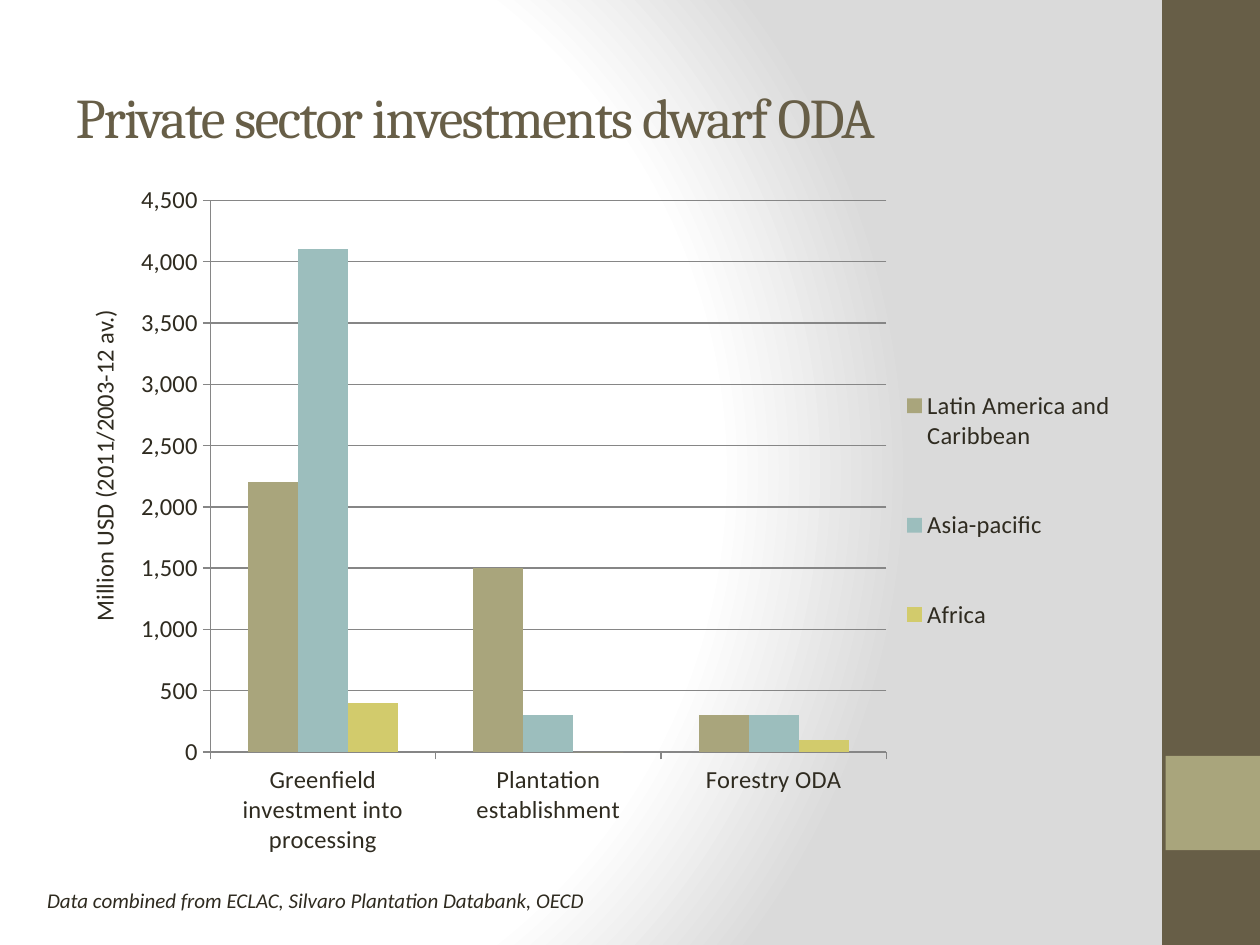
from lxml import etree
from pptx import Presentation
from pptx.chart.data import CategoryChartData
from pptx.dml.color import RGBColor
from pptx.enum.chart import XL_CHART_TYPE, XL_LEGEND_POSITION, XL_TICK_MARK
from pptx.enum.shapes import MSO_SHAPE
from pptx.enum.text import MSO_ANCHOR, MSO_AUTO_SIZE, PP_ALIGN
from pptx.oxml import parse_xml
from pptx.oxml.ns import nsdecls, qn
from pptx.util import Cm, Pt

COLUMNS = XL_CHART_TYPE.COLUMN_CLUSTERED
LEGEND_RIGHT = XL_LEGEND_POSITION.RIGHT
TICK_OUT, TICK_NONE = XL_TICK_MARK.OUTSIDE, XL_TICK_MARK.NONE
RECTANGLE = MSO_SHAPE.RECTANGLE
MIDDLE, LEFT = MSO_ANCHOR.MIDDLE, PP_ALIGN.LEFT
FIT_TEXT = MSO_AUTO_SIZE.SHAPE_TO_FIT_TEXT

BROWN, OLIVE, INK, GREY = "675E47", "A9A57C", "2F2B20", "868686"

TITLE = "Private sector investments dwarf ODA"
AXIS_LABEL = "Million USD (2011/2003-12 av.)"
SOURCE = "Data combined from ECLAC, Silvaro Plantation Databank, OECD"
CATEGORIES = ["Greenfield investment into processing",
              "Plantation establishment", "Forestry ODA"]
REGIONS = [
    ("Latin America and Caribbean", (2200, 1500, 300), OLIVE),
    ("Asia-pacific", (4100, 300, 300), "9CBEBD"),
    ("Africa", (400, 0, 100), "D2CB6C"),
]
# left, top, width, height in cm
SIDE_BLOCKS = [
    ((23.43, 0, 1.97, 19.05), BROWN),
    ((23.5, 15.24, 1.9, 1.9), OLIVE),
]
# left, top, width, height in percent of the chart
PLOT_AREA = (18.5, 3.4, 59.5, 74.1)
LEGEND_AREA = (78.75, 21, 20, 48)
BACKDROP_STOPS = [(0, "FFFFFF"), (75, "FFFFFF"), (100, "DADADA")]


def rgb(color):
    return RGBColor.from_string(color)


def box(*lengths):
    return [Cm(length) for length in lengths]


def style_font(font, size, color=INK, name="Calibri", italic=False):
    font.size, font.name, font.italic = Pt(size), name, italic
    font.bold = False
    font.color.rgb = rgb(color)


def write(shape, text, wrap=True, spacing=None, **style):
    """Fill a shape with one paragraph; spacing is in points."""
    shape.text_frame.word_wrap = wrap
    paragraph = shape.text_frame.paragraphs[0]
    paragraph.alignment = LEFT
    run = paragraph.add_run()
    run.text = text
    style_font(run.font, **style)
    if spacing is not None:
        run.font._element.set("spc", str(int(spacing * 100)))


def paint_background(slide):
    stops = "".join(
        f'<a:gs pos="{pos * 1000}"><a:srgbClr val="{color}"/></a:gs>'
        for pos, color in BACKDROP_STOPS)
    slide.background.fill.solid()
    solid = slide._element.cSld.find(".//" + qn("a:solidFill"))
    solid.getparent().replace(solid, parse_xml(
        f'<a:gradFill {nsdecls("a")} rotWithShape="1"><a:gsLst>{stops}</a:gsLst>'
        '<a:path path="circle"><a:fillToRect l="20000" t="50000" '
        'r="100000" b="50000"/></a:path></a:gradFill>'))


def place(element, index, area, inner=False):
    """Give a chart part a manual layout."""
    for old in element.findall(qn("c:layout")):
        element.remove(old)
    layout = etree.Element(qn("c:layout"))
    manual = etree.SubElement(layout, qn("c:manualLayout"))
    settings = [("layoutTarget", "inner")] if inner else []
    settings += [("xMode", "edge"), ("yMode", "edge")]
    settings += [(side, percent / 100) for side, percent in zip("xywh", area)]
    for tag, value in settings:
        etree.SubElement(manual, qn("c:" + tag)).set("val", str(value))
    element.insert(index, layout)


def add_investment_chart(slide):
    data = CategoryChartData(number_format="#,##0")
    data.categories = CATEGORIES
    for region, amounts, _ in REGIONS:
        data.add_series(region, amounts)
    chart = slide.shapes.add_chart(COLUMNS, *box(0, 3.53, 22.91, 15.01), data).chart
    chart.has_title = False
    style_font(chart.font, 10)

    plot = chart.plots[0]
    plot.gap_width, plot.overlap, plot.vary_by_categories = 150, 0, False
    for series, (_, _, color) in zip(plot.series, REGIONS):
        series.format.fill.solid()
        series.format.fill.fore_color.rgb = rgb(color)

    amounts_axis = chart.value_axis
    amounts_axis.minimum_scale, amounts_axis.maximum_scale = 0, 4500
    amounts_axis.major_unit = 500
    amounts_axis.has_major_gridlines = True
    amounts_axis.tick_labels.number_format = "#,##0"
    amounts_axis.tick_labels.number_format_is_linked = False
    for axis in (chart.category_axis, amounts_axis):
        axis.major_tick_mark, axis.minor_tick_mark = TICK_OUT, TICK_NONE
        style_font(axis.tick_labels.font, 14)
    for part in (chart.category_axis, amounts_axis, amounts_axis.major_gridlines):
        part.format.line.color.rgb = rgb(GREY)
        part.format.line.width = Pt(0.8)

    chart.has_legend = True
    legend = chart.legend
    legend.position, legend.include_in_layout = LEGEND_RIGHT, False
    style_font(legend.font, 14)
    place(legend._element, 1, LEGEND_AREA)
    place(chart._chartSpace.chart.plotArea, 0, PLOT_AREA, inner=True)


def main():
    deck = Presentation()
    deck.slide_width, deck.slide_height = Cm(25.4), Cm(19.05)
    slide = deck.slides.add_slide(deck.slide_layouts.get_by_name("Title Only"))
    paint_background(slide)

    for position, color in SIDE_BLOCKS:
        block = slide.shapes.add_shape(RECTANGLE, *box(*position))
        block.shadow.inherit = False
        block.fill.solid()
        block.fill.fore_color.rgb = rgb(color)
        block.line.fill.background()

    add_investment_chart(slide)

    title = slide.shapes.title
    title.left, title.top, title.width, title.height = box(1.27, 0.76, 21.16, 3.18)
    title.text_frame.vertical_anchor = MIDDLE
    write(title, TITLE, size=32, color=BROWN, name="Cambria", spacing=-1)

    axis_label = slide.shapes.add_textbox(*box(-1.31, 8.93, 6.83, 0.86))
    axis_label.rotation = 270
    write(axis_label, AXIS_LABEL, wrap=False, size=14)

    source = slide.shapes.add_textbox(*box(0.7, 17.77, 11.99, 0.76))
    write(source, SOURCE, size=12, italic=True)

    for label in (axis_label, source):
        label.text_frame.auto_size = FIT_TEXT

    deck.save("out.pptx")


if __name__ == "__main__":
    main()
